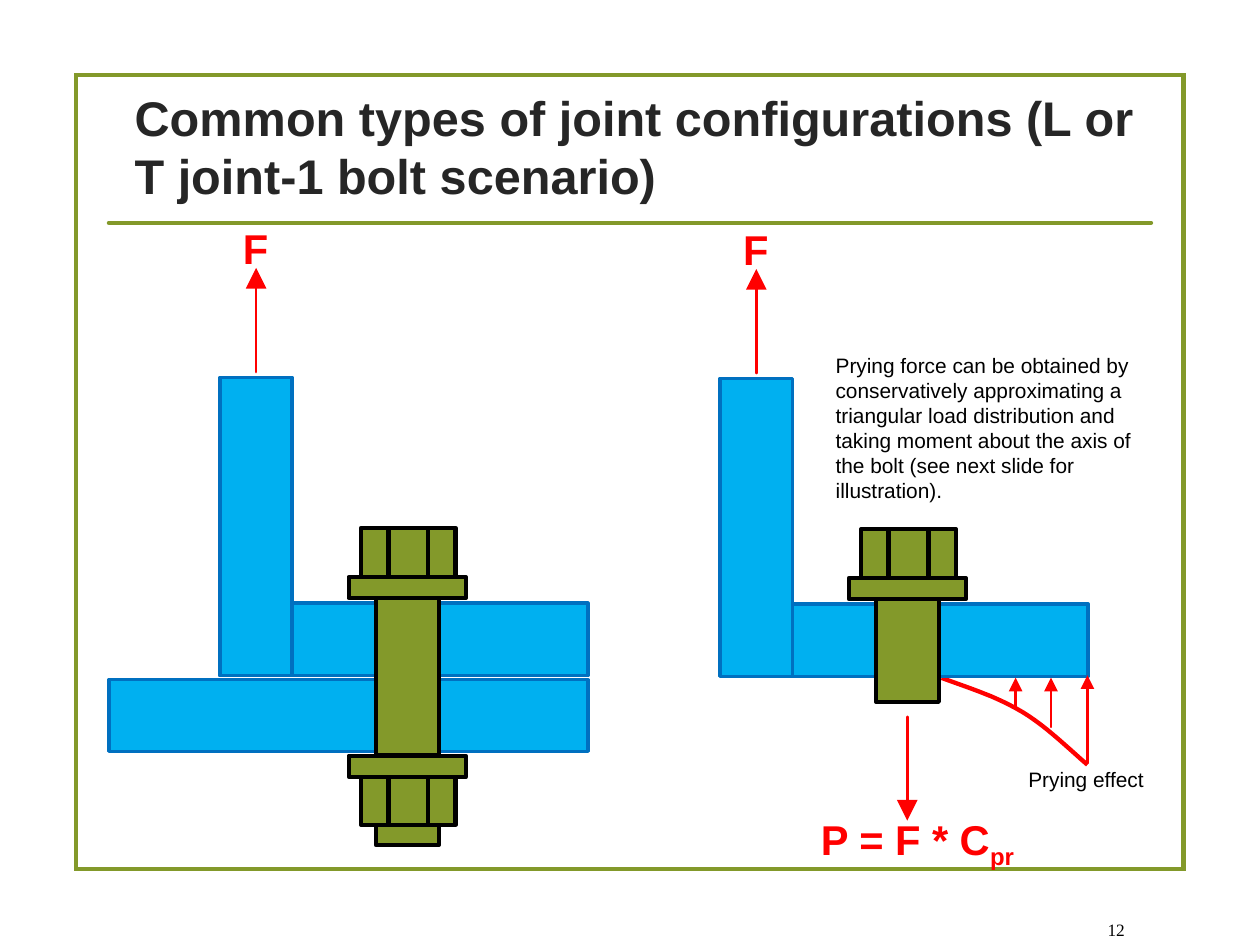
import pptx
import pptx.dml.color
import pptx.enum.shapes
import pptx.enum.text
import pptx.oxml
import pptx.oxml.ns
import pptx.util

Pt = pptx.util.Pt
ALIGN = pptx.enum.text.PP_ALIGN
ANCHOR = pptx.enum.text.MSO_ANCHOR

GREEN, RED, BLACK = "83992A", "FF0000", "000000"
PLATE_FILL, PLATE_EDGE = "00B0F0", "0070C0"
JOINT_SHIFT = (144.1, 0.3)


def color(hex_string):
    return pptx.dml.color.RGBColor.from_string(hex_string)


def add_xml(parent, tag, **attributes):
    element = pptx.oxml.parse_xml(f"<a:{tag} {pptx.oxml.ns.nsdecls('a')}/>")
    for name, value in attributes.items():
        element.set(name, value)
    parent.append(element)


def bezier(start, control_1, control_2, end, steps=12):
    """Points along a cubic curve, without its start."""
    for step in range(1, steps + 1):
        t = step / steps
        yield tuple(
            (1 - t) ** 3 * a + 3 * t * (1 - t) ** 2 * b + 3 * t * t * (1 - t) * c + t ** 3 * d
            for a, b, c, d in zip(start, control_1, control_2, end))


class JointSlide:
    def __init__(self, slide, font="Arial"):
        self.shapes = slide.shapes
        self.font = font
        self.dx, self.dy = 0, 0

    def shift(self, dx, dy):
        """Move everything drawn from now on."""
        self.dx, self.dy = dx, dy

    def place(self, x, y):
        return Pt(x + self.dx), Pt(y + self.dy)

    def rect(self, left, top, right, bottom, fill, edge, weight, sharp=False):
        box = self.shapes.add_shape(
            pptx.enum.shapes.MSO_SHAPE.RECTANGLE, *self.place(left, top),
            Pt(right - left), Pt(bottom - top))
        box.shadow.inherit = False
        if fill:
            box.fill.solid()
            box.fill.fore_color.rgb = color(fill)
        else:
            box.fill.background()
        box.line.color.rgb = color(edge)
        box.line.width = Pt(weight)
        if sharp:
            add_xml(box.line._get_or_add_ln(), "miter", lim="800000")

    def plate(self, left, top, right, bottom):
        self.rect(left, top, right, bottom, PLATE_FILL, PLATE_EDGE, 1)

    def steel(self, left, top, right, bottom):
        self.rect(left, top, right, bottom, GREEN, BLACK, 1.25)

    def line(self, start, end, stroke, weight, arrow=None):
        """Straight line with round ends; arrow is the size of the head at its end."""
        connector = self.shapes.add_connector(
            pptx.enum.shapes.MSO_CONNECTOR.STRAIGHT, *self.place(*start), *self.place(*end))
        connector.line.color.rgb = color(stroke)
        connector.line.width = Pt(weight)
        outline = connector.line._get_or_add_ln()
        outline.set("cap", "rnd")
        if arrow:
            add_xml(outline, "tailEnd", type="triangle", w=arrow, len=arrow)
        add_xml(connector._element.spPr, "effectLst")

    def curve(self, points, stroke, weight):
        first, *rest = [self.place(*point) for point in points]
        builder = self.shapes.build_freeform(*first)
        builder.add_line_segments(rest, close=False)
        outline = builder.convert_to_shape()
        outline.shadow.inherit = False
        outline.fill.background()
        outline.line.color.rgb = color(stroke)
        outline.line.width = Pt(weight)

    def text(self, left, top, width, height, words, size, ink=BLACK, bold=False, wrap=True,
             anchor=ANCHOR.TOP, align=ALIGN.LEFT, font=None, subscript=None):
        box = self.shapes.add_textbox(*self.place(left, top), Pt(width), Pt(height))
        frame = box.text_frame
        frame.text = words
        frame.word_wrap = wrap
        frame.vertical_anchor = anchor
        paragraph = frame.paragraphs[0]
        paragraph.alignment = align
        if subscript:
            lowered = paragraph.add_run()
            lowered.text = subscript
            lowered._r.get_or_add_rPr().set("baseline", "-25000")
        for run in paragraph.runs:
            run.font.name = font or self.font
            run.font.size = Pt(size)
            run.font.bold = bold
            run.font.color.rgb = color(ink)

    def hexagon_side(self, top, bottom):
        """Three visible faces of a bolt head or nut."""
        edges = (104, 111.9, 123.4, 131.3)
        for left, right in zip(edges, edges[1:]):
            self.steel(left, top, right, bottom)

    def washer(self, top):
        self.steel(100.5, top, 134.2, top + 6.1)

    def shank(self, top, bottom):
        self.steel(108.3, top, 126.4, bottom)

    def bolt_top(self, shank_bottom):
        self.shank(170.6, shank_bottom)
        self.washer(166.2)
        self.hexagon_side(152.1, 166.2)

    def angle(self):
        """L-shaped part with the force pulling on its upright leg."""
        self.plate(63.4, 173.7, 169.4, 194.6)
        self.plate(63.4, 108.7, 84.2, 194.6)
        self.line((73.8, 107.2), (73.8, 77.2), RED, 0.75, "med")
        self.text(62.9, 60.7, 22.3, 21.6, "F", 12, RED, bold=True, wrap=False)


def main():
    deck = pptx.Presentation()
    deck.slide_width, deck.slide_height = Pt(363), Pt(272.5)
    joint = JointSlide(deck.slides.add_slide(deck.slide_layouts[6]))

    joint.rect(22, 21.6, 341, 250.3, None, GREEN, 1.25, sharp=True)
    joint.line((31.4, 64.2), (331.6, 64.2), GREEN, 1.25)
    joint.text(31.7, 16.2, 306, 51.8,
               "Common types of joint configurations (L or T joint-1 bolt scenario)",
               14, "262626", bold=True, anchor=ANCHOR.MIDDLE)
    joint.text(301, 262.4, 30.2, 10.8, "12", 5, anchor=ANCHOR.MIDDLE, align=ALIGN.RIGHT,
               font="Times New Roman")

    # Full joint
    joint.plate(31.4, 195.8, 169.4, 216.5)
    joint.angle()
    joint.shank(217.7, 243.4)
    joint.bolt_top(217.7)
    joint.washer(217.7)
    joint.hexagon_side(223.8, 237.6)

    # Free body of the angle, with the prying load
    start, middle, end = (271.3, 195.3), (292.8, 204.1), (313.3, 220.3)
    joint.curve([start,
                 *bezier(start, (278.6, 198), (285.8, 200.2), middle),
                 *bezier(middle, (300.2, 208.1), (306.7, 214.6), end)], RED, 1.25)
    joint.shift(*JOINT_SHIFT)
    joint.angle()
    joint.bolt_top(201.9)
    joint.shift(0, 0)
    joint.line((261.4, 206.5), (261.4, 236.4), RED, 0.75, "med")
    joint.text(229.4, 230.8, 72, 21.6, "P = F * C", 12, RED, bold=True, wrap=False,
               subscript="pr")
    for x, tail, head in ((313.3, 219.8, 194.5), (302.8, 209.4, 195.2), (292.6, 203.8, 195.2)):
        joint.line((x, tail), (x, head), RED, 0.75, "sm")
    joint.text(289.2, 217.2, 48.2, 21.6, "Prying effect", 6, wrap=False)
    joint.text(233.7, 98, 103.7, 58.3,
               "Prying force can be obtained by conservatively approximating a triangular load "
               "distribution and taking moment about the axis of the bolt (see next slide for "
               "illustration).", 6)

    deck.save("out.pptx")


if __name__ == "__main__":
    main()
